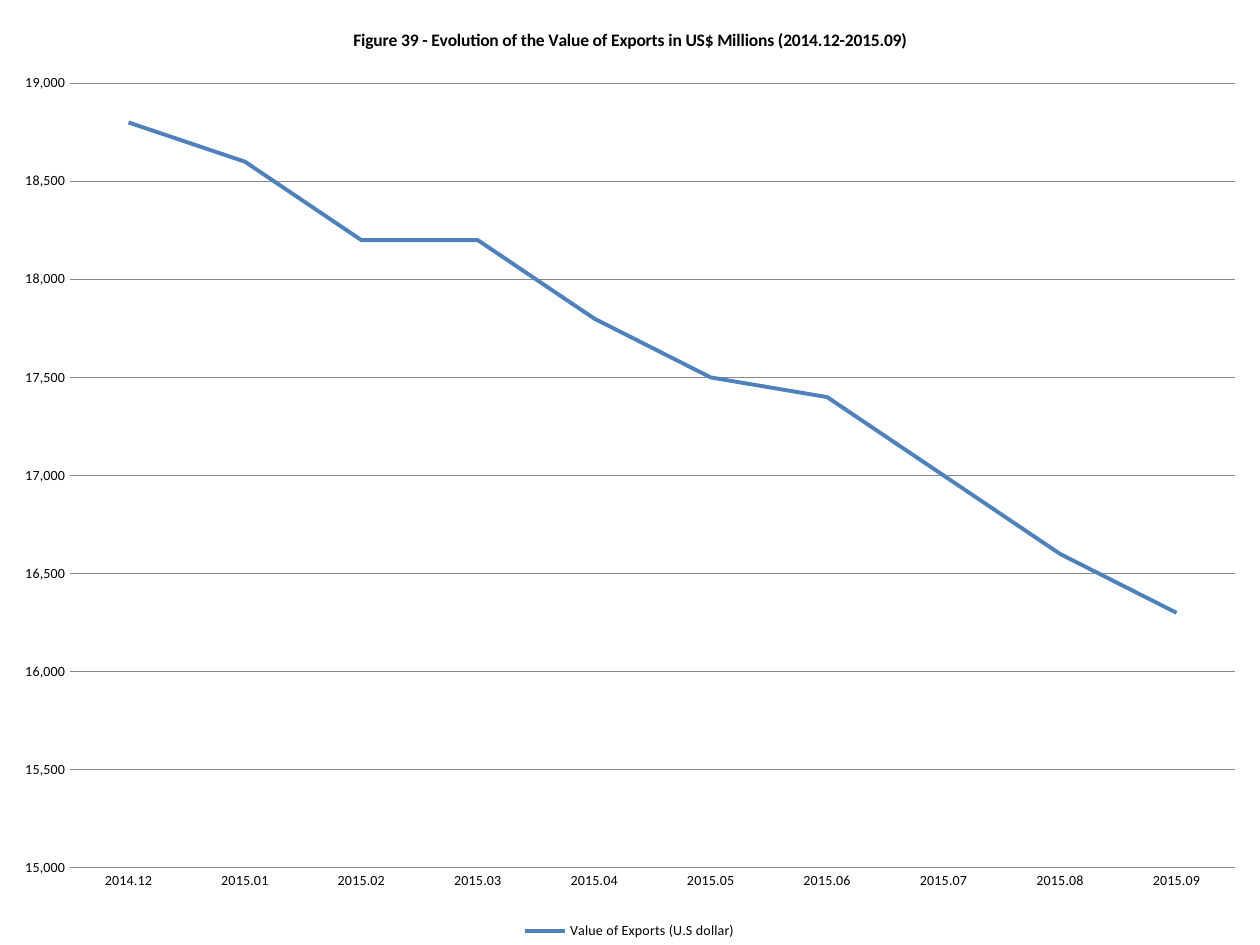
from pptx import Presentation
from pptx.chart.data import CategoryChartData as ChartData
from pptx.dml.color import RGBColor
from pptx.enum.chart import XL_CHART_TYPE as Kind
from pptx.enum.chart import XL_LEGEND_POSITION as Place
from pptx.enum.chart import XL_MARKER_STYLE as Marker
from pptx.enum.chart import XL_TICK_MARK as Tick
from pptx.util import Pt

# Content
TITLE = "Figure 39 - Evolution of the Value of Exports in US$ Millions (2014.12-2015.09)"
NAME = "Value of Exports (U.S dollar)"
EXPORTS = {
    "2014.12": 18800, "2015.01": 18600, "2015.02": 18200, "2015.03": 18200,
    "2015.04": 17800, "2015.05": 17500, "2015.06": 17400, "2015.07": 17000,
    "2015.08": 16600, "2015.09": 16300,
}

# Style
PX = 914400 // 126
WIDE, HIGH = 1260 * PX, 945 * PX
FACE = "Calibri"
BLUE = RGBColor(0x4F, 0x81, 0xBD)
GRAY = RGBColor(0x86, 0x86, 0x86)
BLACK = RGBColor(0, 0, 0)


def style(font, size, bold=False):
    font.name, font.size, font.bold = FACE, Pt(size), bold
    font.color.rgb = BLACK


def rule(line, color, width=0.75):
    line.color.rgb = color
    line.width = Pt(width)


deck = Presentation()
deck.slide_width, deck.slide_height = WIDE, HIGH
slide = deck.slides.add_slide(deck.slide_layouts[6])

# Chart over the whole slide
data = ChartData(number_format="#,##0")
data.categories = list(EXPORTS)
data.add_series(NAME, list(EXPORTS.values()))
chart = slide.shapes.add_chart(Kind.LINE, 0, 0, WIDE, HIGH, data).chart
style(chart.font, 10)

# Title and legend
chart.has_title = True
frame = chart.chart_title.text_frame
frame.text = TITLE
style(frame.paragraphs[0].font, 10, True)
chart.chart_title.include_in_layout = False
chart.has_legend = True
chart.legend.position = Place.BOTTOM
chart.legend.include_in_layout = False
style(chart.legend.font, 8)

# Axes
months, values = chart.category_axis, chart.value_axis
for axis in (months, values):
    axis.major_tick_mark = axis.minor_tick_mark = Tick.NONE
    style(axis.tick_labels.font, 8)
rule(months.format.line, GRAY)
values.format.line.fill.background()
values.minimum_scale, values.maximum_scale = 15000, 19000
values.major_unit = 500
values.tick_labels.number_format = "#,##0"
values.tick_labels.number_format_is_linked = False
values.has_major_gridlines = True
rule(values.major_gridlines.format.line, GRAY)

# Line
chart.plots[0].vary_by_categories = False
line = chart.plots[0].series[0]
line.smooth = False
line.marker.style = Marker.NONE
rule(line.format.line, BLUE, 2.25)

deck.save("out.pptx")
